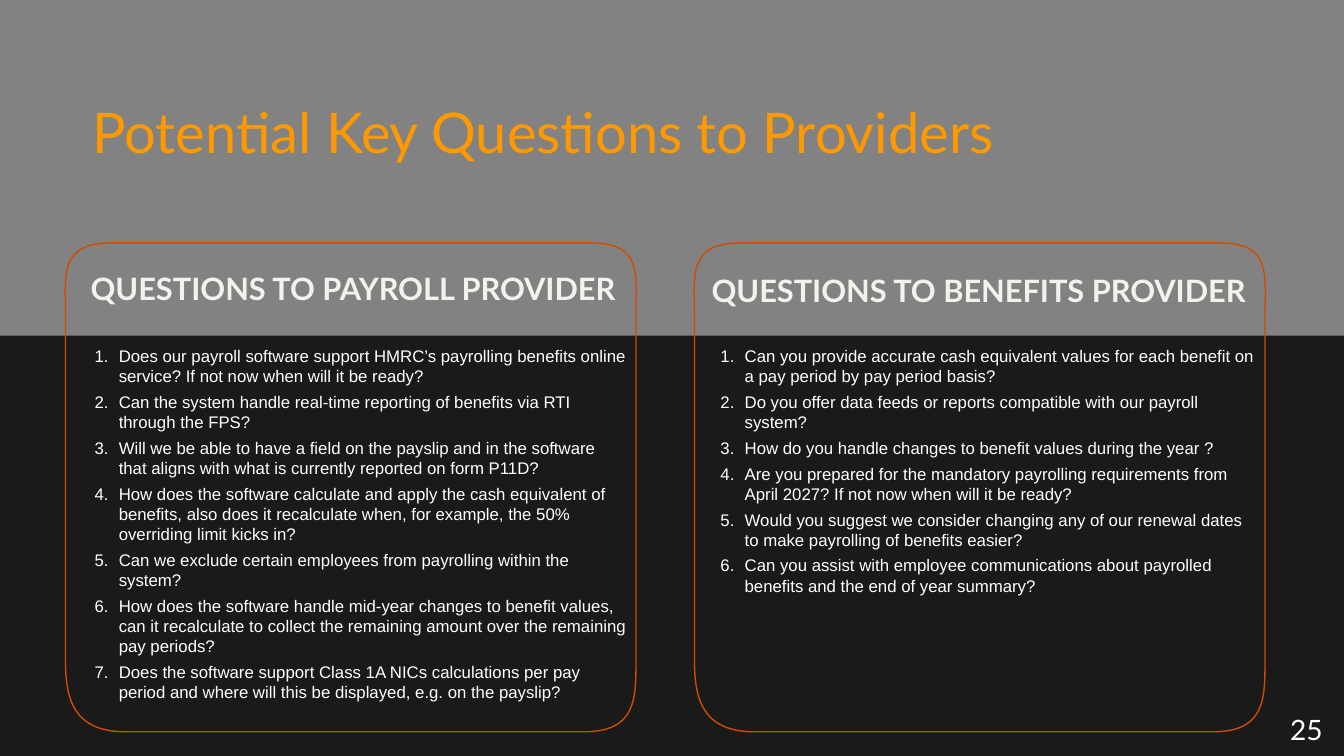
from dataclasses import dataclass

from lxml import etree
from pptx import Presentation
from pptx.dml.color import RGBColor
from pptx.enum.shapes import MSO_SHAPE
from pptx.enum.text import MSO_ANCHOR, PP_ALIGN
from pptx.oxml.ns import qn
from pptx.util import Inches, Pt

RECTANGLE = MSO_SHAPE.RECTANGLE
TOP, MIDDLE, BOTTOM = MSO_ANCHOR.TOP, MSO_ANCHOR.MIDDLE, MSO_ANCHOR.BOTTOM
LEFT, RIGHT = PP_ALIGN.LEFT, PP_ALIGN.RIGHT


@dataclass(frozen=True)
class Theme:
    """Colours, fonts and type sizes of the slide."""
    shade: str = "000000"
    title: str = "FF9900"
    heading: str = "F4F2EC"
    text: str = "FFFFFF"
    outline: str = "D14C00"
    display_font: str = "Lato"
    body_font: str = "Arial"
    title_size: int = 40
    heading_size: int = 22
    number_size: int = 20
    body_size: int = 12


THEME = Theme()
SLIDE_WIDTH, SLIDE_HEIGHT = 40 / 3, 7.5
BAND_TOP = 3.33
PANEL_TOP = 2.41

PANEL_CURVES = (
    ((0, 0.72), (0, 0.32), (-0.07, 0), (0.46, 0)),
    ((5.21, 0), (5.73, 0), (5.66, 0.32), (5.66, 0.72)),
    ((5.66, 4.14), (5.66, 4.53), (5.66, 4.85), (5.14, 4.85)),
    ((0.6, 4.85), (0.08, 4.85), (0, 4.53), (0, 4.14)),
)

PAYROLL_QUESTIONS = (
    "Does our payroll software support HMRC’s payrolling benefits online service? If not now when will it be ready?",
    "Can the system handle real-time reporting of benefits via RTI through the FPS?",
    "Will we be able to have a field on the payslip and in the software that aligns with what is currently "
    "reported on form P11D?",
    "How does the software calculate and apply the cash equivalent of benefits, also does it recalculate when, "
    "for example, the 50% overriding limit kicks in?",
    "Can we exclude certain employees from payrolling within the system?",
    "How does the software handle mid-year changes to benefit values, can it recalculate to collect the "
    "remaining amount over the remaining pay periods?",
    "Does the software support Class 1A NICs calculations per pay period and where will this be displayed, "
    "e.g. on the payslip?",
)
BENEFITS_QUESTIONS = (
    "Can you provide accurate cash equivalent values for each benefit on a pay period by pay period basis?",
    "Do you offer data feeds or reports compatible with our payroll system?",
    "How do you handle changes to benefit values during the year ?",
    "Are you prepared for the mandatory payrolling requirements from April 2027? If not now when will it be ready?",
    "Would you suggest we consider changing any of our renewal dates to make payrolling of benefits easier?",
    "Can you assist with employee communications about payrolled benefits and the end of year summary?",
)


def add_shade(slide, top, opacity):
    """Add a translucent band from the given top to the slide's foot."""
    band = slide.shapes.add_shape(
        RECTANGLE, 0, Inches(top), Inches(SLIDE_WIDTH), Inches(SLIDE_HEIGHT - top))
    band.shadow.inherit = False
    band.line.fill.background()
    band.fill.solid()
    band.fill.fore_color.rgb = RGBColor.from_string(THEME.shade)
    colour = next(band.fill._xPr.iter(qn("a:srgbClr")))
    etree.SubElement(colour, qn("a:alpha"), val=str(opacity * 1000))


def number_paragraph(para):
    """Give a paragraph a hanging automatic number."""
    properties = para._p.get_or_add_pPr()
    properties.set("marL", str(Inches(0.41)))
    properties.set("indent", str(Inches(-0.24)))
    colour = etree.SubElement(properties, qn("a:buClr"))
    etree.SubElement(colour, qn("a:srgbClr"), val=THEME.text)
    etree.SubElement(properties, qn("a:buFont"), typeface=THEME.body_font)
    etree.SubElement(properties, qn("a:buAutoNum"), type="arabicPeriod")


def add_text(slide, lines, place, *, size, colour, font=THEME.display_font, bold=False, anchor=BOTTOM,
             align=LEFT, spacing=1.0, gap=0, margins=(0, 0), numbered=False):
    """Add a text box with one paragraph for each line."""
    box = slide.shapes.add_textbox(*map(Inches, place))
    frame = box.text_frame
    frame.word_wrap = True
    frame.vertical_anchor = anchor
    frame.margin_left = frame.margin_right = Inches(margins[0])
    frame.margin_top = frame.margin_bottom = Inches(margins[1])
    for index, line in enumerate(lines):
        para = frame.add_paragraph() if index else frame.paragraphs[0]
        if numbered:
            number_paragraph(para)
        para.alignment = align
        para.line_spacing = spacing
        para.space_before = Pt(gap if index else 0)
        span = para.add_run()
        span.text = line
        span.font.name = font
        span.font.size = Pt(size)
        span.font.bold = bold
        span.font.color.rgb = RGBColor.from_string(colour)


def bend_corner(segment, curve):
    """Turn a straight segment into a cubic curve."""
    segment.tag = qn("a:cubicBezTo")
    for index, (x, y) in enumerate(curve[1:3]):
        segment.insert(index, segment.makeelement(qn("a:pt"), x=str(Inches(x)), y=str(Inches(y))))


def add_panel(slide, left):
    """Add an outlined panel with curved corners."""
    ends = [point for curve in PANEL_CURVES for point in (curve[0], curve[3])]
    points = [(Inches(left + x), Inches(PANEL_TOP + y)) for x, y in ends]
    builder = slide.shapes.build_freeform(*points[0])
    builder.add_line_segments(points[1:], close=True)
    panel = builder.convert_to_shape()
    segments = list(panel._element.iter(qn("a:lnTo")))
    for segment, curve in zip(segments[::2], PANEL_CURVES):
        bend_corner(segment, curve)
    panel.shadow.inherit = False
    panel.fill.background()
    panel.line.color.rgb = RGBColor.from_string(THEME.outline)
    panel.line.width = Pt(1)


def add_questions(slide, questions, left, width):
    """Add a numbered list of questions."""
    add_text(slide, questions, (left, BAND_TOP, width, 2.78), size=THEME.body_size, colour=THEME.text,
             font=THEME.body_font, anchor=TOP, gap=4, margins=(0.1, 0.1), numbered=True)


def add_heading(slide, text, place):
    """Add the heading of a panel."""
    add_text(slide, [text], place, size=THEME.heading_size, colour=THEME.heading, bold=True, spacing=1.2)


def main():
    """Build the slide and save it."""
    deck = Presentation()
    deck.slide_width, deck.slide_height = Inches(SLIDE_WIDTH), Inches(SLIDE_HEIGHT)
    slide = deck.slides.add_slide(deck.slide_layouts[6])
    add_shade(slide, 0, 49)
    add_shade(slide, BAND_TOP, 80)
    add_text(slide, ["Potential Key Questions to Providers"], (0.92, 1.04, 11.54, 0.6),
             size=THEME.title_size, colour=THEME.title, spacing=0.9)
    add_heading(slide, "QUESTIONS TO PAYROLL PROVIDER", (0.9, 2.64, 5.46, 0.4))
    add_heading(slide, "QUESTIONS TO BENEFITS PROVIDER", (7.06, 2.66, 5.92, 0.4))
    add_text(slide, ["25"], (12.46, 7.04, 0.76, 0.4), size=THEME.number_size, colour=THEME.text,
             anchor=MIDDLE, align=RIGHT, margins=(0.1, 0.05))
    add_panel(slide, 0.65)
    add_questions(slide, PAYROLL_QUESTIONS, 0.67, 5.65)
    add_panel(slide, 6.89)
    add_questions(slide, BENEFITS_QUESTIONS, 6.88, 5.67)
    deck.save("out.pptx")


if __name__ == "__main__":
    main()
